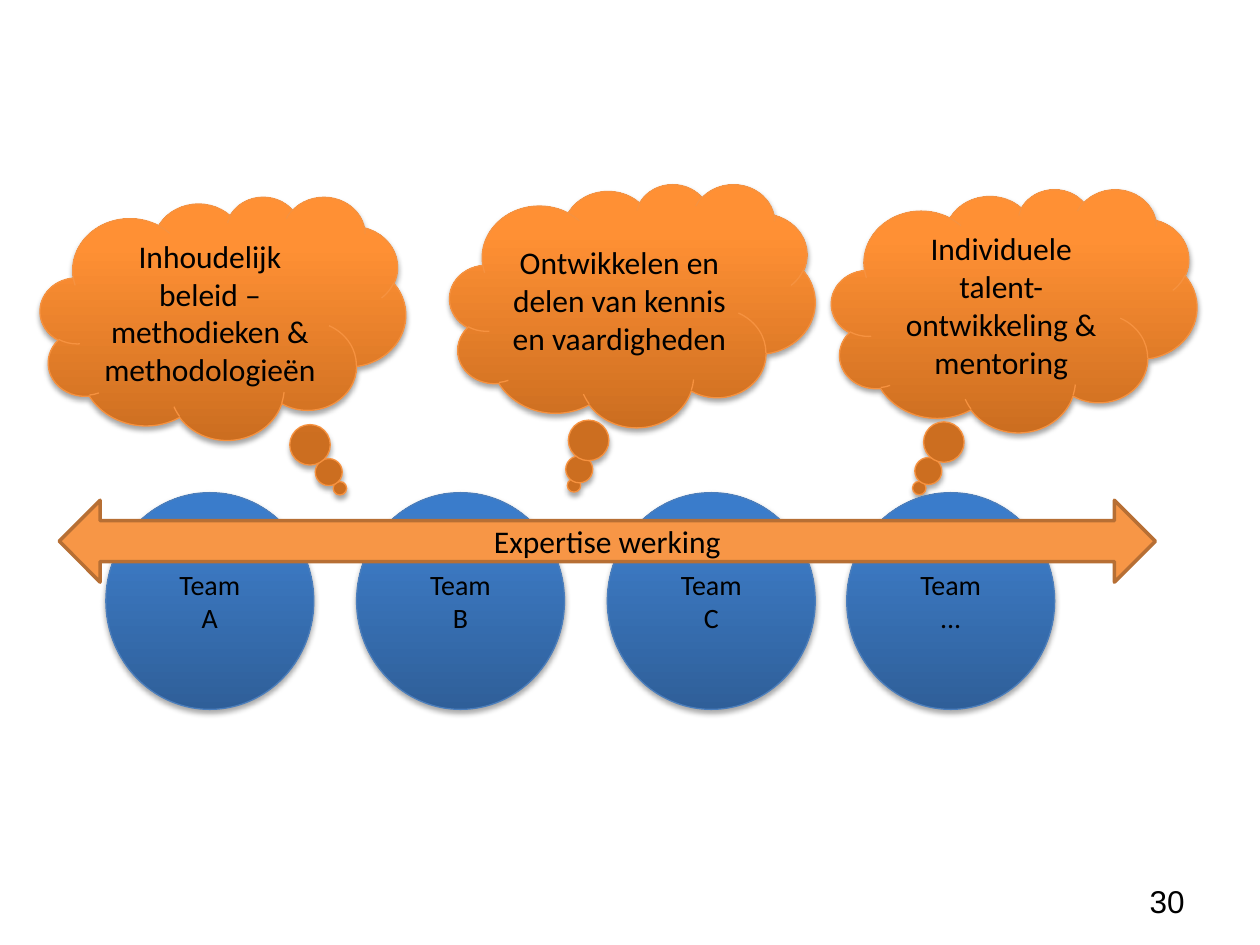
import pptx
import pptx.dml.color
import pptx.enum.shapes
import pptx.enum.text
import pptx.oxml
import pptx.oxml.ns
import pptx.util

Inches = pptx.util.Inches
Pt = pptx.util.Pt
RGB = pptx.dml.color.RGBColor
Kind = pptx.enum.shapes.MSO_SHAPE
Align = pptx.enum.text.PP_ALIGN
Anchor = pptx.enum.text.MSO_ANCHOR
qn = pptx.oxml.ns.qn

BLACK = RGB(0x00, 0x00, 0x00)
ORANGE = RGB(0xF7, 0x96, 0x46)
BROWN = RGB(0xB7, 0x6F, 0x34)
AMBER = RGB(0xF6, 0x92, 0x40)
BLUE = RGB(0x4B, 0x7E, 0xBC)
WARM = ((0, RGB(0xCC, 0x6E, 0x20)), (80, RGB(0xFF, 0x90, 0x34)),
        (100, RGB(0xFF, 0x91, 0x36)))
COOL = ((0, RGB(0x2F, 0x5F, 0x99)), (80, RGB(0x3D, 0x7C, 0xC7)),
        (100, RGB(0x3A, 0x7C, 0xCB)))
SPACE = 'xmlns:a="http://schemas.openxmlformats.org/drawingml/2006/main"'


def write(shape, lines, size, align=Align.CENTER, face="Calibri"):
    """Fill a shape with lines of text, one paragraph each."""
    frame = shape.text_frame
    for name, value in {"word_wrap": True,
                        "vertical_anchor": Anchor.MIDDLE}.items():
        setattr(frame, name, value)
    frame.text = "\n".join(lines)
    for para in frame.paragraphs:
        para.alignment = align
        for name, value in {"size": Pt(size), "name": face}.items():
            setattr(para.font, name, value)
        para.font.color.rgb = BLACK


def draw(slide, kind, box, edge, width):
    """Add a preset shape with an outline and no shadow."""
    shape = slide.shapes.add_shape(kind, *map(Inches, box))
    shape.shadow.inherit = False
    shape.line.color.rgb = edge
    shape.line.width = Pt(width)
    return shape


def shade(shape, stops):
    """Give a shape a rising gradient and a soft shadow below."""
    shape.fill.gradient()
    shape.fill.gradient_angle = 90
    props = shape.element.spPr
    ramp = props.find(qn("a:gradFill")).find(qn("a:gsLst"))
    for old in list(ramp):
        ramp.remove(old)
    for place, color in stops:
        ramp.append(pptx.oxml.parse_xml(
            f'<a:gs {SPACE} pos="{place * 1000}">'
            f'<a:srgbClr val="{color}"/></a:gs>'))
    props.find(qn("a:effectLst")).append(pptx.oxml.parse_xml(
        f'<a:outerShdw {SPACE} blurRad="{Pt(3.1)}" dist="{Pt(1.8)}" '
        'dir="5400000" rotWithShape="0"><a:srgbClr val="000000">'
        '<a:alpha val="35000"/></a:srgbClr></a:outerShdw>'))


def cloud(slide, box, tail, text):
    """Place a thought cloud whose bubbles lead to the tail point."""
    shape = draw(slide, Kind.CLOUD_CALLOUT, box, AMBER, 0.75)
    for spot, value in enumerate(tail):
        shape.adjustments[spot] = value
    shade(shape, WARM)
    write(shape, [text], 18)


def team(slide, box, name):
    """Place one team circle."""
    shape = draw(slide, Kind.OVAL, box, BLUE, 0.75)
    shade(shape, COOL)
    write(shape, ["Team", name], 16)


def arrow(slide, box, text):
    """Place the double arrow that spans the teams."""
    shape = draw(slide, Kind.LEFT_RIGHT_ARROW, box, BROWN, 2)
    shape.fill.solid()
    shape.fill.fore_color.rgb = ORANGE
    write(shape, [text], 18)


def number(slide, box, text):
    """Place the page number."""
    shape = slide.shapes.add_textbox(*map(Inches, box))
    write(shape, [text], 18, Align.RIGHT, "Arial")


def main():
    """Build the slide and save it."""
    deck = pptx.Presentation()
    deck.slide_width, deck.slide_height = Inches(10), Inches(7.5)
    slide = deck.slides.add_slide(deck.slide_layouts[6])
    number(slide, (7.17, 6.95, 2.33, 0.4), "30")
    for left, top, tail, text in (
            (0.32, 1.56, (0.32, 0.7),
             "Inhoudelijk beleid – methodieken & methodologieën"),
            (3.57, 1.46, (-0.16, 0.74),
             "Ontwikkelen en delen van kennis en vaardigheden"),
            (6.6, 1.5, (-0.26, 0.73),
             "Individuele talent- ontwikkeling & mentoring")):
        cloud(slide, (left, top, 2.9, 1.93), tail, text)
    for left, name in ((0.84, "A"), (2.83, "B"), (4.82, "C"), (6.72, "...")):
        team(slide, (left, 3.91, 1.65, 1.72), name)
    arrow(slide, (0.47, 3.97, 8.7, 0.65), "Expertise werking")
    deck.save("out.pptx")


if __name__ == "__main__":
    main()
